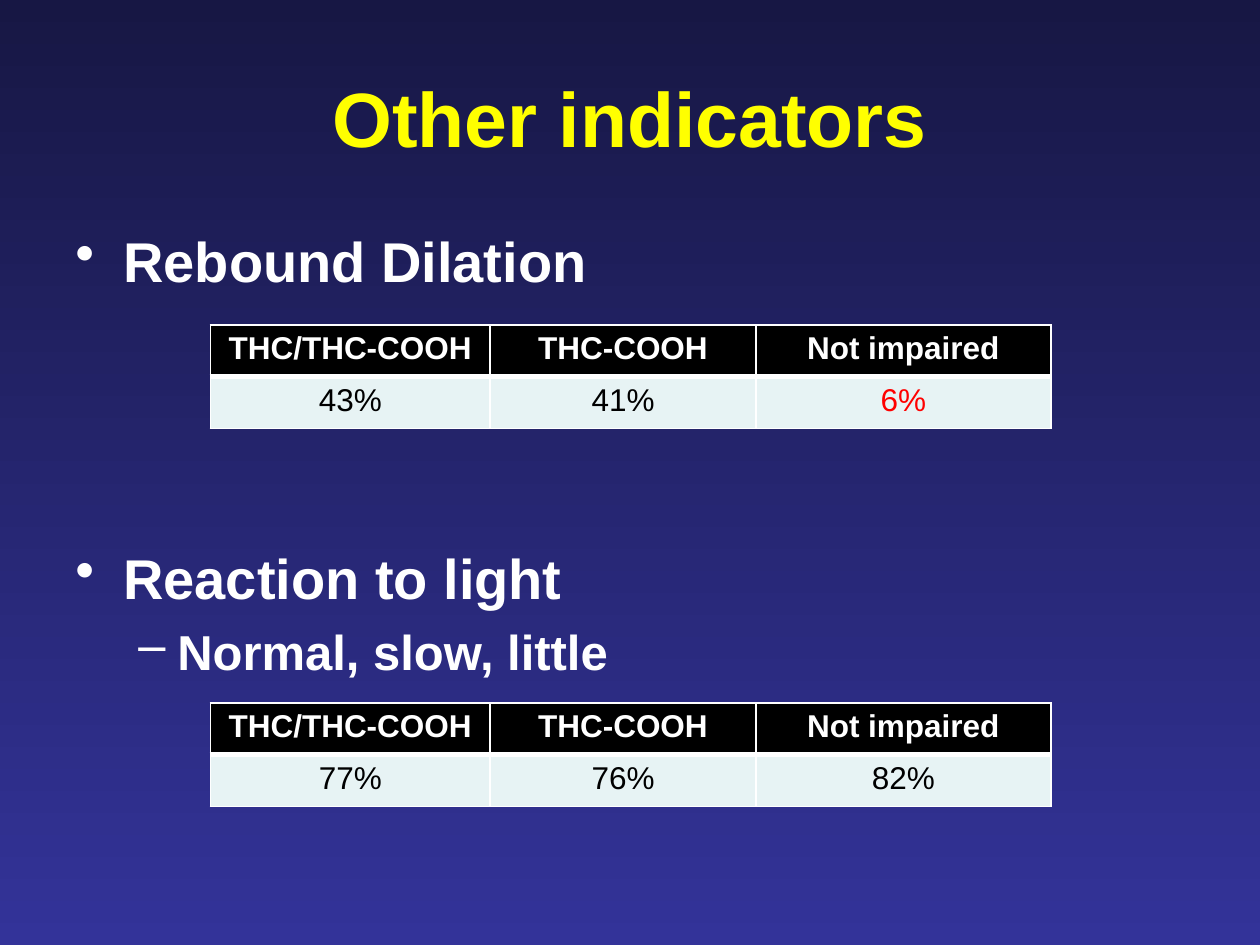
import pptx
import pptx.dml.color
import pptx.enum.text
import pptx.oxml
import pptx.oxml.ns
import pptx.util
from pptx.util import Inches

RGBColor = pptx.dml.color.RGBColor
Align = pptx.enum.text.PP_ALIGN
Anchor = pptx.enum.text.MSO_ANCHOR

NIGHT = RGBColor(0x17, 0x17, 0x44)
INDIGO = RGBColor(0x33, 0x33, 0x99)
YELLOW = RGBColor(0xFF, 0xFF, 0x00)
WHITE = RGBColor(0xFF, 0xFF, 0xFF)
BLACK = RGBColor(0x00, 0x00, 0x00)
RED = RGBColor(0xFF, 0x00, 0x00)
PALE = RGBColor(0xE7, 0xF3, 0xF4)

FONT = "Arial"
HEADINGS = ("THC/THC-COOH", "THC-COOH", "Not impaired")
COLUMN_WIDTHS = (2.22, 2.11, 2.34)
ROW_HEIGHT = 0.41


def add_span(para, text, size, color, bold=True):
    span = para.add_run()
    span.text = text
    span.font.name = FONT
    span.font.size = pptx.util.Pt(size)
    span.font.bold = bold
    span.font.color.rgb = color


def paint_background(page):
    fill = page.background.fill
    fill.gradient()
    fill.gradient_angle = 270
    for stop, color in zip(fill.gradient_stops, (NIGHT, INDIGO)):
        stop.color.rgb = color


def place_title(page, left, top, width, height):
    title = page.shapes.title
    title.left, title.top = Inches(left), Inches(top)
    title.width, title.height = Inches(width), Inches(height)
    title.text_frame.vertical_anchor = Anchor.MIDDLE
    para = title.text_frame.paragraphs[0]
    para.alignment = Align.CENTER
    add_span(para, "Other indicators", 44, YELLOW)


def set_bullet(para, mark, indent, hanging):
    properties = para._p.get_or_add_pPr()
    properties.set("marL", str(Inches(indent)))
    properties.set("indent", str(-Inches(hanging)))
    bullet = pptx.oxml.parse_xml(
        f'<a:buChar {pptx.oxml.ns.nsdecls("a")} char="{mark}"/>')
    properties.append(bullet)


def place_bullets(page, left, top, width, height):
    box = page.shapes.add_textbox(
        Inches(left), Inches(top), Inches(width), Inches(height))
    frame = box.text_frame
    frame.word_wrap = True
    # text, level, size, mark, indent, hanging, space before in points
    items = (
        ("Rebound Dilation", 0, 32, "•", 0.38, 0.38, 6.4),
        ("Reaction to light", 0, 32, "•", 0.38, 0.38, 142.6),
        ("Normal, slow, little", 1, 28, "–", 0.81, 0.31, 6.4),
    )
    for number, (text, level, size, mark, indent, hanging, gap) in enumerate(items):
        para = frame.add_paragraph() if number else frame.paragraphs[0]
        para.level = level
        para.space_before = pptx.util.Pt(gap)
        set_bullet(para, mark, indent, hanging)
        add_span(para, text, size, WHITE)


def set_borders(cell, widths):
    """Draw white borders; widths maps a side (L, R, T, B) to points."""
    properties = cell._tc.get_or_add_tcPr()
    for position, (side, width) in enumerate(widths.items()):
        line = pptx.oxml.parse_xml(
            f'<a:ln{side} {pptx.oxml.ns.nsdecls("a")} w="{pptx.util.Pt(width)}">'
            f'<a:solidFill><a:srgbClr val="{WHITE}"/></a:solidFill></a:ln{side}>')
        properties.insert(position, line)


def place_rates(page, left, top, rates):
    """Add a table of rates, given as (text, colour) pairs under the headings."""
    table = page.shapes.add_table(
        2, len(HEADINGS), Inches(left), Inches(top),
        Inches(sum(COLUMN_WIDTHS)), Inches(2 * ROW_HEIGHT)).table
    for column, width in zip(table.columns, COLUMN_WIDTHS):
        column.width = Inches(width)
    rows = ([(heading, WHITE) for heading in HEADINGS], rates)
    for row_number, row in enumerate(rows):
        table.rows[row_number].height = Inches(ROW_HEIGHT)
        is_header = row_number == 0
        for column_number, (text, color) in enumerate(row):
            cell = table.cell(row_number, column_number)
            cell.fill.solid()
            cell.fill.fore_color.rgb = BLACK if is_header else PALE
            set_borders(cell, {"L": 1, "R": 1, "T": 1 if is_header else 3,
                               "B": 3 if is_header else 1})
            para = cell.text_frame.paragraphs[0]
            para.alignment = Align.CENTER
            add_span(para, text, 18, color, bold=is_header)


def main():
    deck = pptx.Presentation()
    deck.slide_width, deck.slide_height = Inches(10), Inches(7.5)
    page = deck.slides.add_slide(deck.slide_layouts.get_by_name("Title Only"))
    paint_background(page)
    place_title(page, 0.5, 0.3, 9, 1.25)
    place_bullets(page, 0.5, 1.75, 9, 4.95)
    place_rates(page, 1.67, 2.58, (("43%", BLACK), ("41%", BLACK), ("6%", RED)))
    place_rates(page, 1.67, 5.58, (("77%", BLACK), ("76%", BLACK), ("82%", BLACK)))
    deck.save("out.pptx")


if __name__ == "__main__":
    main()
